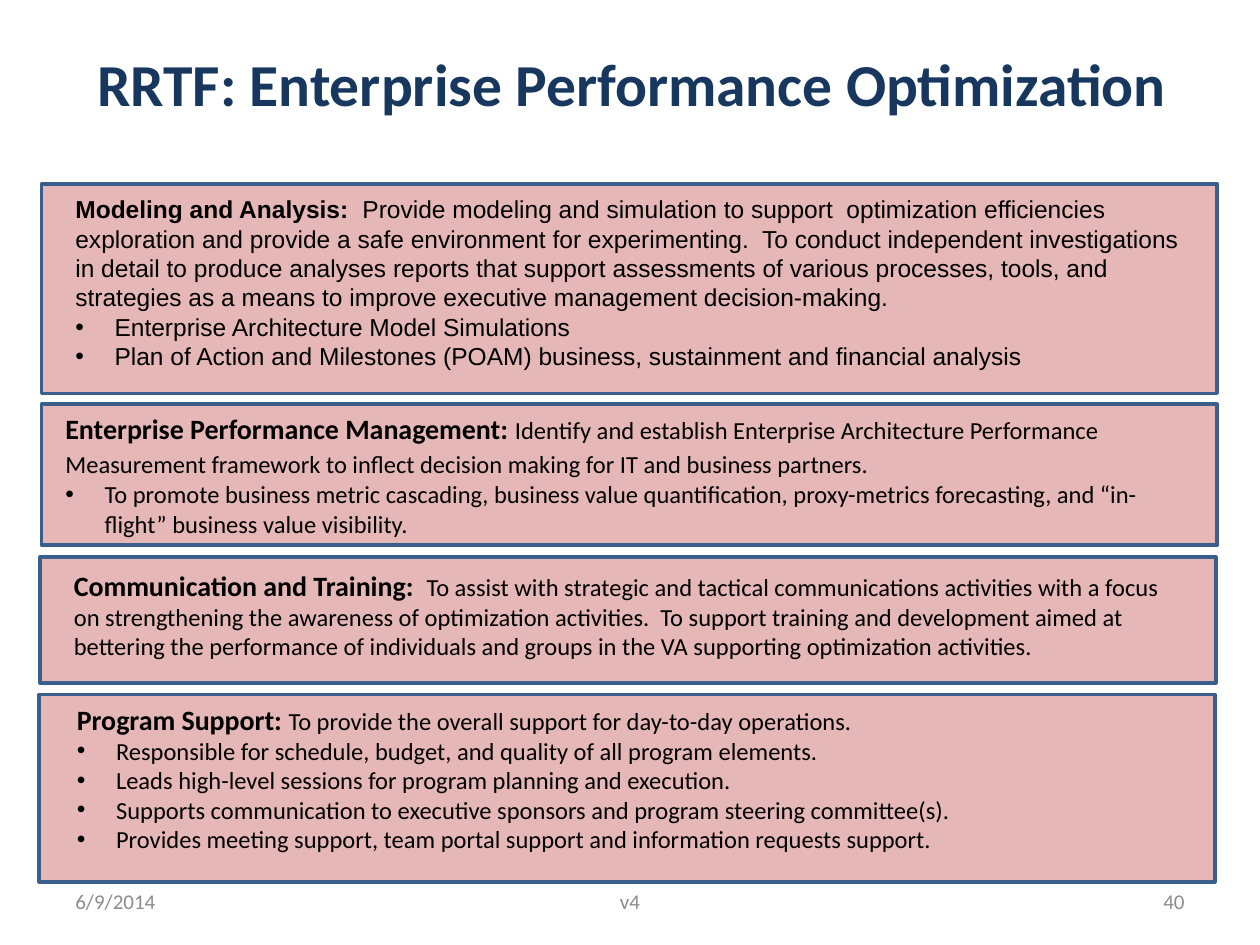
from lxml.etree import SubElement
from pptx import Presentation
from pptx.dml.color import RGBColor
from pptx.enum.shapes import MSO_SHAPE
from pptx.enum.text import MSO_ANCHOR, PP_ALIGN
from pptx.oxml.ns import qn
from pptx.util import Cm, Pt

NAVY = RGBColor(0x17, 0x37, 0x5E)
ROSE = RGBColor(0xD9, 0x96, 0x94)
BORDER = RGBColor(0x3A, 0x5F, 0x8C)
GRAY = RGBColor(0x8C, 0x8C, 0x8C)
BLACK = RGBColor(0, 0, 0)

PANELS = [
    dict(
        box=(0.84, 3.71, 23.7, 4.22), inset=(0.43, 0.08), text_size=(23.06, 3.86),
        font="Arial", heading_size=14, heading="Modeling and Analysis:",
        body="  Provide modeling and simulation to support  optimization efficiencies "
             "exploration and provide a safe environment for experimenting.  To conduct "
             "independent investigations in detail to produce analyses reports that support "
             "assessments of various processes, tools, and strategies as a means to improve "
             "executive management decision-making.",
        bullets=[
            "Enterprise Architecture Model Simulations",
            "Plan of Action and Milestones (POAM) business, sustainment and financial analysis",
        ],
    ),
    dict(
        box=(0.84, 8.15, 23.7, 2.84), inset=(0.23, 0.03), text_size=(22.45, 2.51),
        heading="Enterprise Performance Management: ",
        body="Identify and establish Enterprise Architecture Performance Measurement "
             "framework to inflect decision making for IT and business partners.",
        ending=" ",
        bullets=[
            "To promote business metric cascading, business value quantification, "
            "proxy-metrics forecasting, and “in-flight” business value visibility.",
        ],
    ),
    dict(
        box=(0.81, 11.23, 23.7, 2.54), inset=(0.43, 0.1), text_size=(22.45, 2.13),
        heading="Communication and Training:  ",
        body="To assist with strategic and tactical communications activities with a focus "
             "on strengthening the awareness of optimization activities.  To support training "
             "and development aimed at bettering the performance of individuals and groups in "
             "the VA supporting optimization activities.",
    ),
    dict(
        box=(0.79, 14, 23.7, 3.78), inset=(0.51, 0.03), text_size=(22.12, 3),
        heading="Program Support: ",
        body="To provide the overall support for day-to-day operations.",
        bullets=[
            "Responsible for schedule, budget, and quality of all program elements.",
            "Leads high-level sessions for program planning and execution.",
            "Supports communication to executive sponsors and program steering committee(s).",
            "Provides meeting support, team portal support and information requests support.",
        ],
    ),
]


def add_text(paragraph, text, size=14, font="Calibri", color=BLACK, bold=False):
    run = paragraph.add_run()
    run.text = text
    run.font.size = Pt(size)
    run.font.name = font
    run.font.color.rgb = color
    run.font.bold = bold


def add_frame(slide, box, anchor=MSO_ANCHOR.TOP):
    frame = slide.shapes.add_textbox(*map(Cm, box)).text_frame
    frame.word_wrap = True
    frame.vertical_anchor = anchor
    return frame


def add_line(slide, box, text, align, **text_format):
    paragraph = add_frame(slide, box, MSO_ANCHOR.MIDDLE).paragraphs[0]
    paragraph.alignment = align
    add_text(paragraph, text, **text_format)


def add_bullet(frame, text, font):
    paragraph = frame.add_paragraph()
    properties = paragraph._p.get_or_add_pPr()
    properties.set("marL", str(Cm(0.79)))
    properties.set("indent", str(-Cm(0.79)))
    SubElement(properties, qn("a:buFont")).set("typeface", "Arial")
    SubElement(properties, qn("a:buChar")).set("char", "•")
    add_text(paragraph, text, font=font)


def add_background(slide, box):
    shape = slide.shapes.add_shape(MSO_SHAPE.RECTANGLE, *map(Cm, box))
    shape.shadow.inherit = False
    shape.fill.solid()
    shape.fill.fore_color.rgb = ROSE
    color = shape._element.spPr.find(qn("a:solidFill")).find(qn("a:srgbClr"))
    SubElement(color, qn("a:alpha")).set("val", "68000")
    shape.line.color.rgb = BORDER
    shape.line.width = Pt(2)


def add_panel(slide, box, inset, text_size, heading, body, bullets=(), ending="",
              font="Calibri", heading_size=16):
    add_background(slide, box)
    left, top = box[0] + inset[0], box[1] + inset[1]
    frame = add_frame(slide, (left, top, *text_size))
    paragraph = frame.paragraphs[0]
    add_text(paragraph, heading, size=heading_size, font=font, bold=True)
    add_text(paragraph, body, font=font)
    if ending:
        add_text(paragraph, ending, size=heading_size, font=font, bold=True)
    for bullet in bullets:
        add_bullet(frame, bullet, font)


def add_footer(slide, left, top, width, height):
    side = 5.92
    middle = 8.05
    parts = [
        (left, side, "6/9/2014", PP_ALIGN.LEFT),
        (left + (width - middle) / 2, middle, "v4", PP_ALIGN.CENTER),
        (left + width - side, side, "40", PP_ALIGN.RIGHT),
    ]
    for part_left, part_width, text, align in parts:
        add_line(slide, (part_left, top, part_width, height), text, align,
                 size=12, color=GRAY)


def main():
    presentation = Presentation()
    presentation.slide_width = Cm(25.4)
    presentation.slide_height = Cm(19.05)
    slide = presentation.slides.add_slide(presentation.slide_layouts[6])
    add_line(slide, (0.43, 0.41, 24.61, 2.51), "RRTF: Enterprise Performance Optimization",
             PP_ALIGN.CENTER, size=34, color=NAVY, bold=True)
    for panel in PANELS:
        add_panel(slide, **panel)
    add_footer(slide, 1.27, 17.65, 22.86, 1.02)
    presentation.save("out.pptx")


if __name__ == "__main__":
    main()
